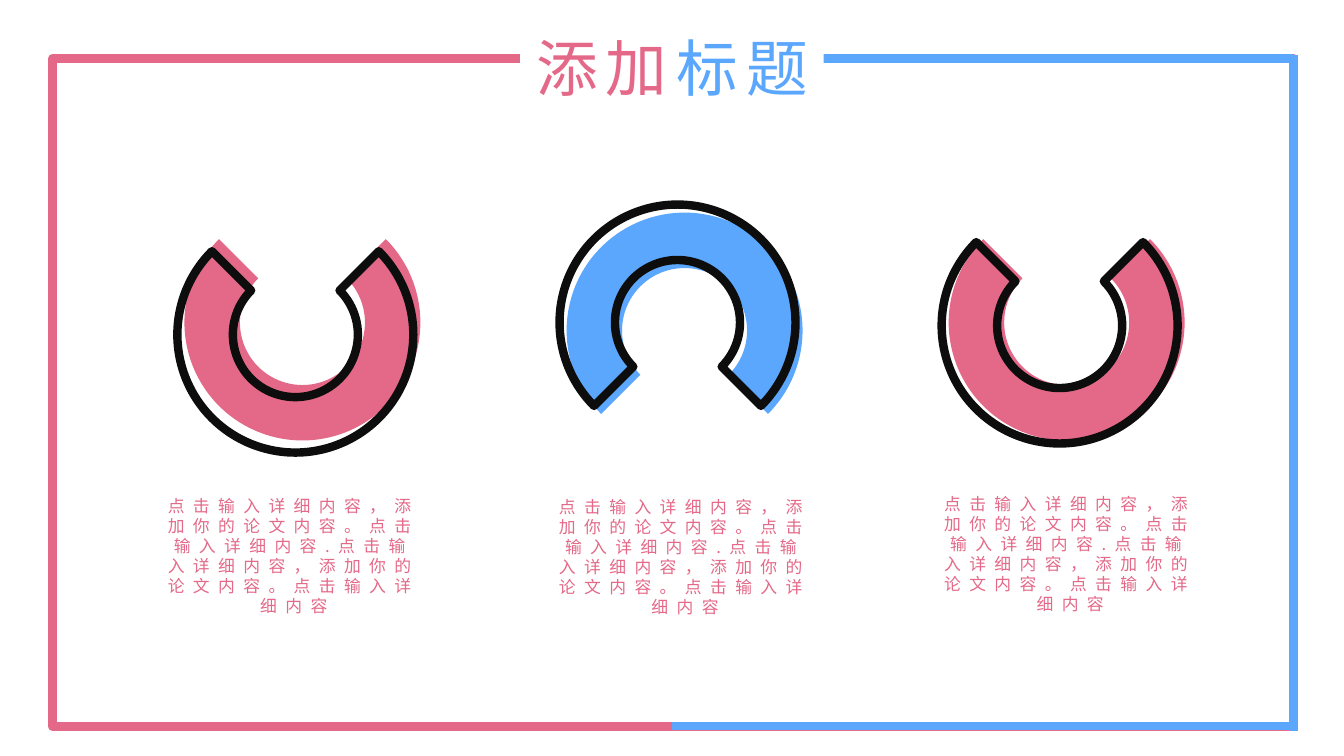
from dataclasses import dataclass

from lxml import etree
from pptx import Presentation
from pptx.dml.color import RGBColor
from pptx.enum.shapes import MSO_CONNECTOR, MSO_SHAPE
from pptx.enum.text import MSO_ANCHOR, PP_ALIGN
from pptx.oxml.ns import qn
from pptx.util import Inches, Pt

RECTANGLE, BLOCK_ARC = MSO_SHAPE.RECTANGLE, MSO_SHAPE.BLOCK_ARC
STRAIGHT = MSO_CONNECTOR.STRAIGHT
CENTER, MIDDLE = PP_ALIGN.CENTER, MSO_ANCHOR.MIDDLE


@dataclass(frozen=True)
class Theme:
    pink: RGBColor = RGBColor.from_string("E46988")
    blue: RGBColor = RGBColor.from_string("5BA7FD")
    black: RGBColor = RGBColor.from_string("0D0D0D")
    white: RGBColor = RGBColor.from_string("FFFFFF")
    font: str = "Noto Sans CJK SC"
    title_size: int = 44
    body_size: int = 12
    body_leading: float = 14.3
    letter_spacing: int = 6
    stroke: int = 6


class SlideBuilder:
    def __init__(self, slide, theme):
        self.slide, self.theme = slide, theme

    def format(self, target, values):
        for attribute, value in values.items():
            setattr(target, attribute, value)

    def outline(self, line, color):
        line.color.rgb = color
        line.width = Pt(self.theme.stroke)

    def shape(self, kind, box, fill=None, line=None):
        shape = self.slide.shapes.add_shape(kind, *map(Inches, box))
        shape.shadow.inherit = False
        if fill is None:
            shape.fill.background()
        else:
            shape.fill.solid()
            shape.fill.fore_color.rgb = fill
        if line is None:
            shape.line.fill.background()
        else:
            self.outline(shape.line, line)
        return shape

    def line(self, start, end, color):
        edge = self.slide.shapes.add_connector(STRAIGHT, *map(Inches, start + end))
        self.outline(edge.line, color)
        etree.SubElement(edge._element.spPr, qn("a:effectLst"))

    def open_ring(self, left, top, angles, fill=None, line=None):
        ring = self.shape(BLOCK_ARC, (left, top, RING, RING), fill, line)
        # Preset angles count in 60000ths of a degree, adjustments in 100000ths
        for index, angle in enumerate(angles):
            ring.adjustments[index] = angle * 0.6
        ring.adjustments[2] = BAND / RING
        if line is not None:
            etree.SubElement(ring.line._get_or_add_ln(), qn("a:round"))

    def run(self, paragraph, text, size, color):
        run = paragraph.add_run()
        run.text = text
        self.format(run.font, {"name": self.theme.font, "size": Pt(size), "bold": False})
        run.font.color.rgb = color
        properties = run.font._element
        properties.set("spc", str(self.theme.letter_spacing * 100))
        etree.SubElement(properties, qn("a:ea"), typeface=self.theme.font)

    def title(self, box, parts):
        title = self.slide.shapes.title
        self.format(title, dict(zip(("left", "top", "width", "height"), map(Inches, box))))
        title.fill.solid()
        title.fill.fore_color.rgb = self.theme.white
        self.format(title.text_frame, {"word_wrap": False, "vertical_anchor": MIDDLE})
        paragraph = title.text_frame.paragraphs[0]
        paragraph.alignment = CENTER
        for text, color in parts:
            self.run(paragraph, text, self.theme.title_size, color)
        # The title covers the top edge of the frame
        self.slide.shapes._spTree.append(title._element)

    def body(self, box, text):
        frame = self.slide.shapes.add_textbox(*map(Inches, box)).text_frame
        self.format(frame, {
            "word_wrap": True,
            "margin_left": Inches(0.08), "margin_right": Inches(0.08),
            "margin_top": Inches(0.04), "margin_bottom": Inches(0.04),
        })
        paragraph = frame.paragraphs[0]
        self.format(paragraph, {"alignment": CENTER,
                                "line_spacing": Pt(self.theme.body_leading)})
        self.run(paragraph, text, self.theme.body_size, self.theme.pink)


RING, BAND = 2.34, 0.55
OPEN_TOP, OPEN_BOTTOM = (315, 225), (135, 45)
DETAIL = ("点击输入详细内容，添加你的论文内容。点击输入详细内容."
          "点击输入详细内容，添加你的论文内容。点击输入详细内容")


def main():
    presentation = Presentation()
    presentation.slide_width, presentation.slide_height = Inches(13.33), Inches(7.5)
    slide = presentation.slides.add_slide(presentation.slide_layouts[5])
    theme = Theme()
    builder = SlideBuilder(slide, theme)

    # Frame: pink all round, blue over the right half
    builder.shape(RECTANGLE, (0.52, 0.58, 12.31, 6.63), line=theme.pink)
    middle, right, top, bottom = 6.67, 12.83, 0.58, 7.2
    builder.line((middle, top), (right, top), theme.blue)
    builder.line((middle, bottom), (right, bottom), theme.blue)
    builder.line((right, 0.55), (right, 7.25), theme.blue)

    # Columns: filled ring, offset outline ring, detail text
    columns = (
        (OPEN_TOP, theme.pink, (1.83, 2.03), (1.76, 2.15), (1.55, 4.88)),
        (OPEN_BOTTOM, theme.blue, (5.62, 2.11), (5.55, 2.03), (5.43, 4.89)),
        (OPEN_TOP, theme.pink, (9.41, 2.03), (9.34, 2.06), (9.25, 4.86)),
    )
    for angles, color, filled_at, outline_at, detail_at in columns:
        builder.open_ring(*filled_at, angles, fill=color)
        builder.open_ring(*outline_at, angles, line=theme.black)
        builder.body(detail_at + (2.73, 1.49), DETAIL)

    # Title
    builder.title((5.16, 0.24, 3.01, 0.84), (("添加", theme.pink), ("标题", theme.blue)))

    presentation.save("out.pptx")


if __name__ == "__main__":
    main()
